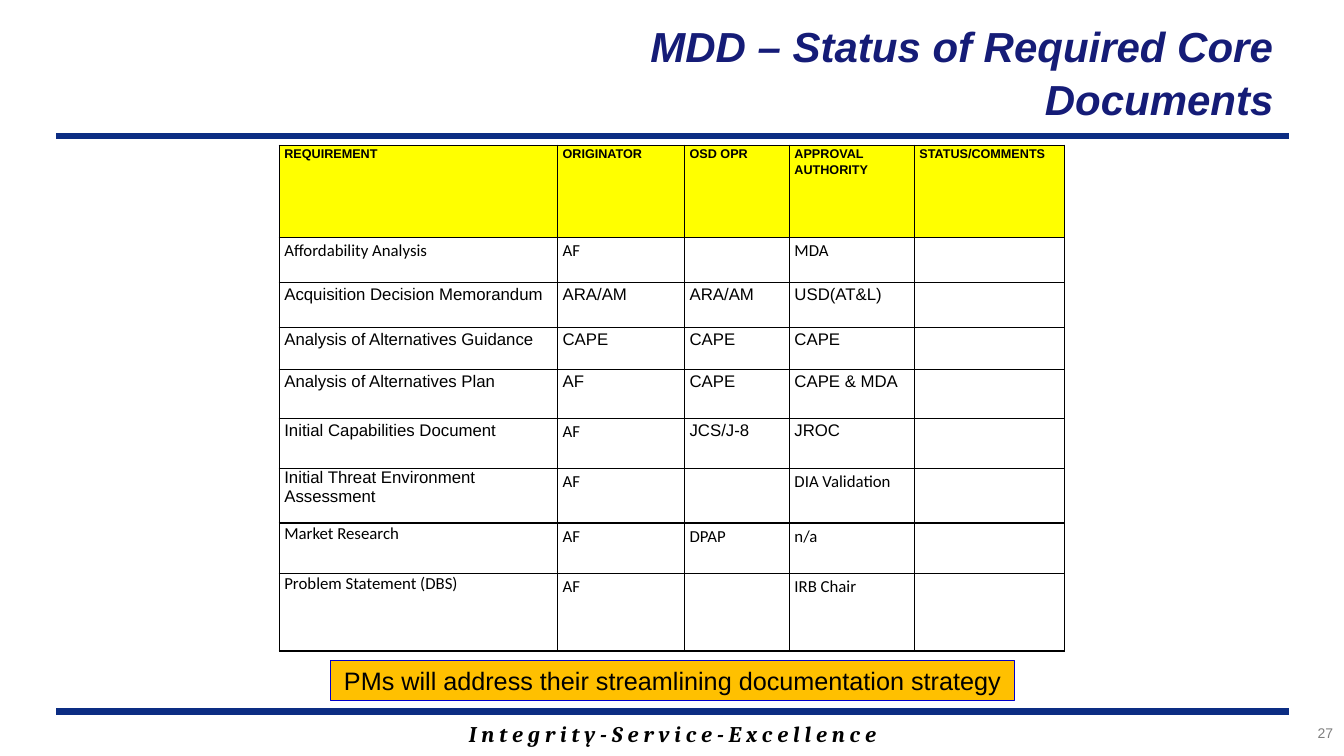
import pptx
import pptx.dml.color
import pptx.enum.shapes
import pptx.enum.text
import pptx.oxml
import pptx.oxml.ns
import pptx.util
from pptx.util import Inches

ALIGN = pptx.enum.text.PP_ALIGN
ANCHOR = pptx.enum.text.MSO_ANCHOR

COLUMN_WIDTHS = [2.76, 1.26, 1.04, 1.24, 1.49]
ROW_HEIGHTS = [0.92, 0.44, 0.45, 0.42, 0.48, 0.5, 0.54, 0.5, 0.77]
HEADERS = ["REQUIREMENT", "ORIGINATOR", "OSD OPR", "APPROVAL\nAUTHORITY", "STATUS/COMMENTS"]
# Each row: its texts, the fonts of its columns (A = Arial, C = Calibri),
# and the line spacing of its first column.
DOCUMENTS = [
    (["Affordability Analysis", "AF", "", "MDA", ""], "CCCCC", 1.15),
    (["Acquisition Decision Memorandum", "ARA/AM", "ARA/AM", "USD(AT&L)", ""], "AAAAA", 1.15),
    (["Analysis of Alternatives Guidance", "CAPE", "CAPE", "CAPE", ""], "AAAAA", 1.15),
    (["Analysis of Alternatives Plan", "AF", "CAPE", "CAPE & MDA", ""], "AAAAA", 1.15),
    (["Initial Capabilities Document", "AF", "JCS/J-8", "JROC", ""], "ACAAA", 1.15),
    (["Initial Threat Environment\nAssessment", "AF", "", "DIA Validation", ""], "ACCCC", 1.0),
    (["Market Research", "AF", "DPAP", "n/a", ""], "CCCCC", 1.0),
    (["Problem Statement (DBS)", "AF", "", "IRB Chair", ""], "CCCCC", 1.0),
]
FONTS = {"A": "Arial", "C": "Calibri"}


def rgb(value):
    return pptx.dml.color.RGBColor.from_string(value)


def write(tf, text, size, font="Arial", color="000000", bold=False, italic=False,
          align=ALIGN.LEFT, spacing=1.0):
    """Fill a text frame, one paragraph for each line of text."""
    for i, line in enumerate(text.split("\n")):
        p = tf.add_paragraph() if i else tf.paragraphs[0]
        p.alignment = align
        p.line_spacing = spacing
        r = p.add_run()
        r.text = line
        r.font.size = pptx.util.Pt(size)
        r.font.name = font
        r.font.color.rgb = rgb(color)
        r.font.bold = bold
        r.font.italic = italic


def add_text(slide, box, text, size, anchor=ANCHOR.TOP, **style):
    tf = slide.shapes.add_textbox(*map(Inches, box)).text_frame
    tf.word_wrap = True
    tf.vertical_anchor = anchor
    write(tf, text, size, **style)


def add_rule(slide, y):
    line = slide.shapes.add_connector(
        pptx.enum.shapes.MSO_CONNECTOR.STRAIGHT,
        Inches(0.56), Inches(y), Inches(12.78), Inches(y))
    line.line.color.rgb = rgb("0C2D83")
    line.line.width = pptx.util.Pt(4.5)
    line._element.spPr.append(pptx.oxml.parse_xml(
        f'<a:effectLst {pptx.oxml.ns.nsdecls("a")}/>'))


def add_borders(cell):
    tcPr = cell._tc.get_or_add_tcPr()
    for side in ("lnL", "lnR", "lnT", "lnB"):
        tcPr.append(pptx.oxml.parse_xml(
            f'<a:{side} {pptx.oxml.ns.nsdecls("a")} w="12700"><a:solidFill>'
            f'<a:srgbClr val="000000"/></a:solidFill></a:{side}>'))


def format_cell(cell, fill=None):
    cell.margin_left = cell.margin_right = Inches(0.05)
    cell.margin_top = cell.margin_bottom = 0
    add_borders(cell)
    if fill:
        cell.fill.solid()
        cell.fill.fore_color.rgb = rgb(fill)
    else:
        cell.fill.background()


def add_document_table(slide):
    table = slide.shapes.add_table(
        len(ROW_HEIGHTS), len(COLUMN_WIDTHS), Inches(2.77), Inches(1.44),
        Inches(sum(COLUMN_WIDTHS)), Inches(sum(ROW_HEIGHTS))).table
    table.first_row = table.horz_banding = False
    for column, width in zip(table.columns, COLUMN_WIDTHS):
        column.width = Inches(width)
    for row, height in zip(table.rows, ROW_HEIGHTS):
        row.height = Inches(height)

    for col, header in enumerate(HEADERS):
        cell = table.cell(0, col)
        format_cell(cell, "FFFF00")
        write(cell.text_frame, header, 9, bold=True, spacing=1.15)
    for row, (texts, fonts, first_spacing) in enumerate(DOCUMENTS, 1):
        for col, (text, font) in enumerate(zip(texts, fonts)):
            cell = table.cell(row, col)
            format_cell(cell)
            if text:
                write(cell.text_frame, text, 12, FONTS[font],
                      spacing=1.15 if col else first_spacing)


def add_banner(slide, box, text):
    sp = slide.shapes.add_shape(
        pptx.enum.shapes.MSO_SHAPE.RECTANGLE, *map(Inches, box))
    sp.shadow.inherit = False
    sp.fill.solid()
    sp.fill.fore_color.rgb = rgb("FFC000")
    sp.line.color.rgb = rgb("0000CC")
    sp.line.width = pptx.util.Pt(0.75)
    sp.text_frame.word_wrap = False
    write(sp.text_frame, text, 18, align=ALIGN.CENTER)


def main():
    prs = pptx.Presentation()
    prs.slide_width, prs.slide_height = Inches(13.33), Inches(7.5)
    slide = prs.slides.add_slide(prs.slide_layouts[6])

    add_text(slide, (1.89, 7.1, 9.56, 0.37),
             "I n t e g r i t y - S e r v i c e - E x c e l l e n c e", 16,
             font="Cambria", bold=True, italic=True, align=ALIGN.CENTER)
    for y in (7.06, 1.35):
        add_rule(slide, y)
    add_text(slide, (4.21, 0.29, 8.52, 0.83), "MDD – Status of Required Core Documents",
             30, anchor=ANCHOR.MIDDLE, color="151C77", bold=True, italic=True,
             align=ALIGN.RIGHT, spacing=1.05)
    add_document_table(slide)
    add_banner(slide, (3.28, 6.55, 6.78, 0.4),
               "PMs will address their streamlining documentation strategy")
    add_text(slide, (11.65, 7.14, 1.67, 0.33), "27", 10, color="7F7F7F", align=ALIGN.RIGHT)

    prs.save("out.pptx")


if __name__ == "__main__":
    main()
